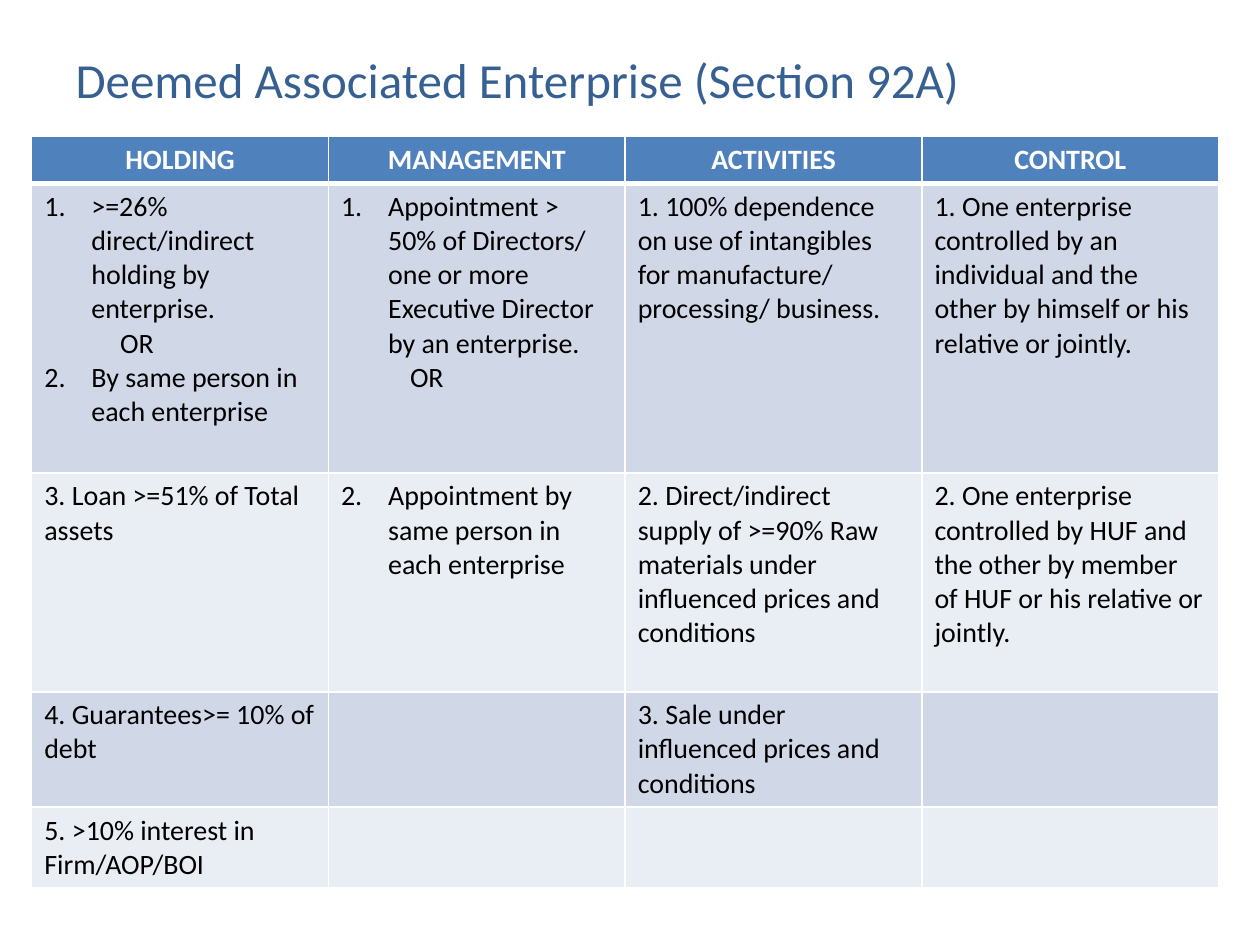
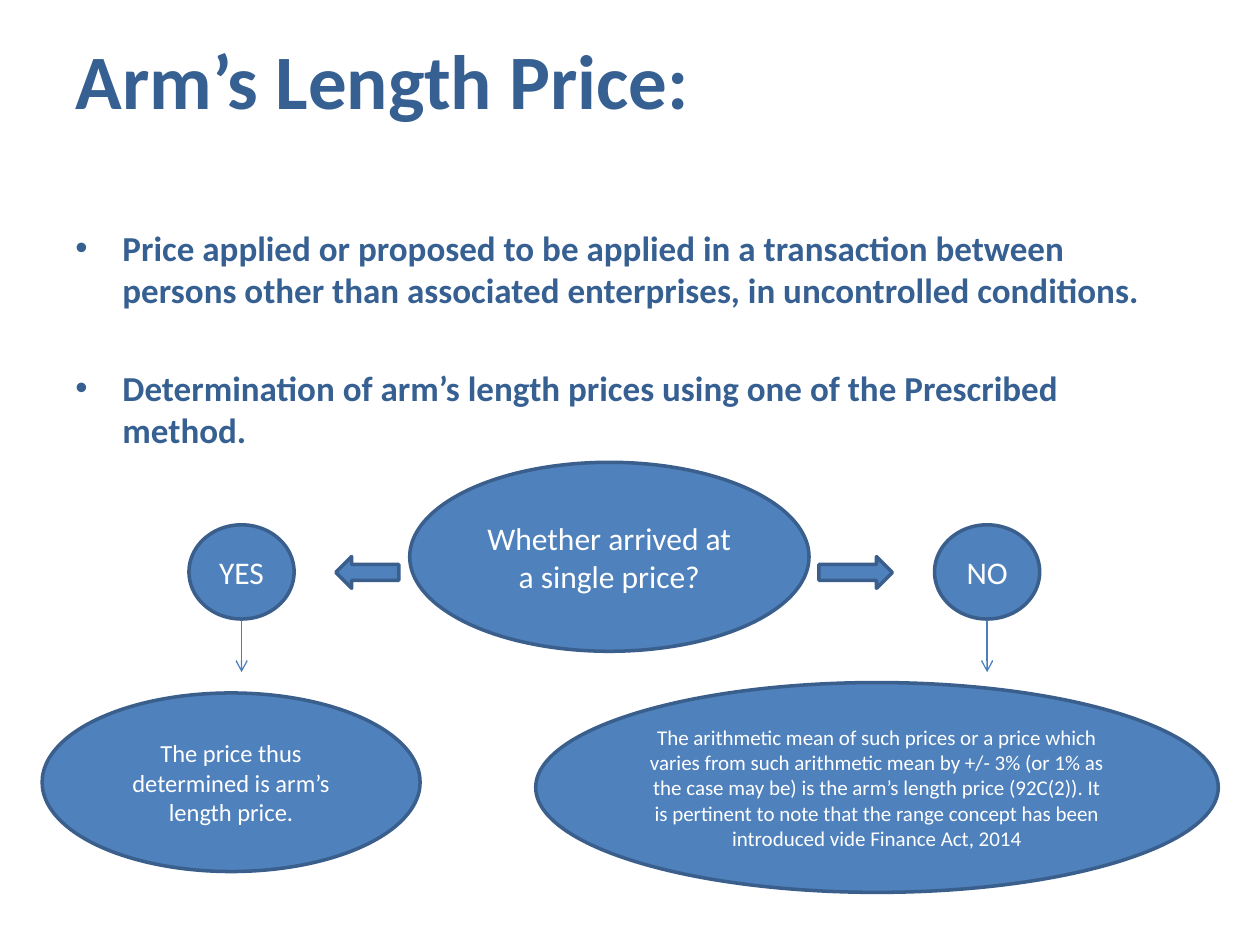
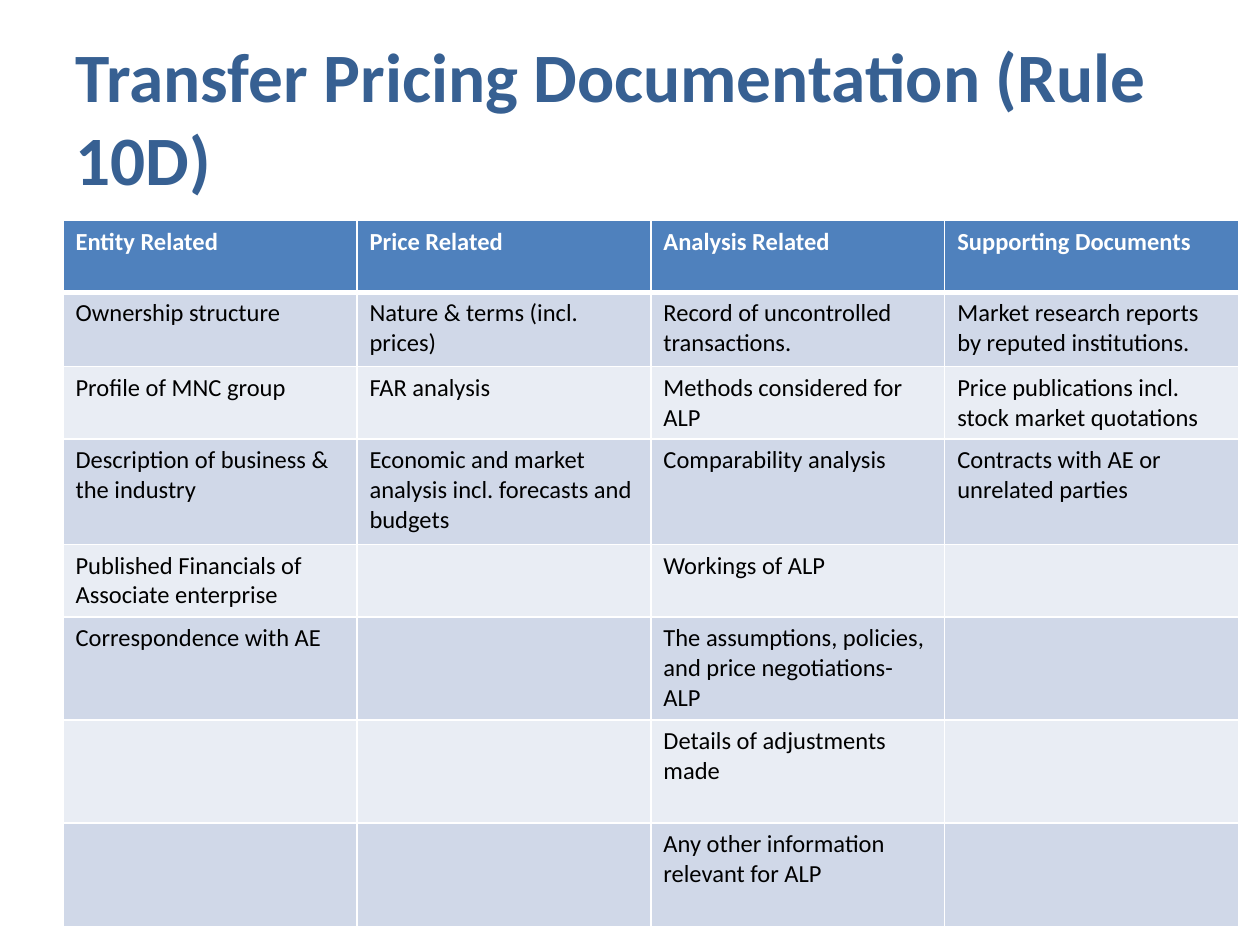
from dataclasses import dataclass

from lxml import etree
from pptx import Presentation
from pptx.dml.color import RGBColor
from pptx.enum.shapes import MSO_CONNECTOR, MSO_SHAPE
from pptx.enum.text import MSO_ANCHOR, MSO_AUTO_SIZE, PP_ALIGN
from pptx.oxml.ns import qn
from pptx.util import Cm, Pt

LEFT, CENTER = PP_ALIGN.LEFT, PP_ALIGN.CENTER
MIDDLE = MSO_ANCHOR.MIDDLE
NO_FIT = MSO_AUTO_SIZE.NONE
STRAIGHT = MSO_CONNECTOR.STRAIGHT
OVAL = MSO_SHAPE.OVAL
RIGHT_ARROW, LEFT_ARROW = MSO_SHAPE.RIGHT_ARROW, MSO_SHAPE.LEFT_ARROW

FONT = "Calibri"
COLORS = {
    "title": "376092",
    "accent": "4F81BD",
    "outline": "3A5F8C",
    "arrow": "4B7EBC",
    "band_dark": "D0D8E8",
    "band_light": "E9EDF4",
    "white": "FFFFFF",
    "black": "000000",
}
TITLE_ONLY = 5
HANGING = 0.95


@dataclass(frozen=True)
class Item:
    """A cell paragraph: numbered with a hanging indent, or moved right by indent."""
    text: str
    number: int = 0
    indent: float = 0


@dataclass(frozen=True)
class Grid:
    left: float
    top: float
    width: float
    heights: tuple[float, ...]
    size: float
    header_align: PP_ALIGN
    rows: tuple[tuple[str | tuple[Item, ...], ...], ...]


@dataclass(frozen=True)
class Node:
    kind: MSO_SHAPE
    left: float
    top: float
    width: float
    height: float
    text: str = ""
    size: float = 18


ENTERPRISE_GRID = Grid(
    0.64, 2.75, 23.93, (0.91, 5.84, 4.41, 2.32, 1.63), 16, CENTER,
    (
        ("HOLDING", "MANAGEMENT", "ACTIVITIES", "CONTROL"),
        (
            (
                Item(">=26% direct/indirect holding by enterprise.", number=1),
                Item("OR", indent=1.53),
                Item("By same person in each enterprise", number=2),
            ),
            (
                Item("Appointment > 50% of Directors/ one or more Executive "
                     "Director by an enterprise.", number=1),
                Item("OR", indent=1.39),
            ),
            "1. 100% dependence on use of intangibles for manufacture/ "
            "processing/ business.",
            "1. One enterprise controlled by an individual and the other by "
            "himself or his relative or jointly.",
        ),
        (
            "3. Loan >=51% of Total assets",
            (Item("Appointment by same person in each enterprise", number=2),),
            "2. Direct/indirect supply of >=90% Raw materials under influenced "
            "prices and conditions",
            "2. One enterprise controlled by HUF and the other by member of HUF "
            "or his relative or jointly.",
        ),
        ("4. Guarantees>= 10% of debt", "",
         "3. Sale under influenced prices and conditions", ""),
        ("5. >10% interest in Firm/AOP/BOI", "", "", ""),
    ),
)

DOCUMENT_GRID = Grid(
    1.27, 4.45, 23.7, (1.44, 1.5, 1.45, 2.13, 1.45, 2.08, 2.08, 2.08), 14, LEFT,
    (
        ("Entity Related", "Price Related", "Analysis Related",
         "Supporting Documents"),
        ("Ownership structure", "Nature & terms (incl. prices)",
         "Record of uncontrolled transactions.",
         "Market research reports by reputed institutions."),
        ("Profile of MNC group", "FAR analysis", "Methods considered for ALP",
         "Price publications incl. stock market quotations"),
        ("Description of business & the industry",
         "Economic and market analysis incl. forecasts and budgets",
         "Comparability analysis", "Contracts with AE or unrelated parties"),
        ("Published Financials of Associate enterprise", "", "Workings of ALP", ""),
        ("Correspondence with AE", "",
         "The assumptions, policies, and price negotiations- ALP", ""),
        ("", "", "Details of adjustments made", ""),
        ("", "", "Any other information relevant for ALP", ""),
    ),
)

PRICE_POINTS = (
    "Price applied or proposed to be applied in a transaction between persons "
    "other than associated enterprises, in uncontrolled conditions.",
    "Determination of arm’s length prices using one of the Prescribed method.",
)

PRICE_NODES = (
    Node(OVAL, 8.26, 9.32, 8.05, 3.81, "Whether arrived at a single price?"),
    Node(RIGHT_ARROW, 16.51, 11.22, 1.48, 0.64),
    Node(LEFT_ARROW, 6.77, 11.22, 1.27, 0.64),
    Node(OVAL, 3.81, 10.58, 2.12, 1.9, "YES"),
    Node(OVAL, 18.84, 10.58, 2.12, 1.9, "NO"),
    Node(OVAL, 0.85, 13.97, 7.62, 3.6,
         "The price thus determined is arm’s length price.", 14),
    Node(OVAL, 10.8, 13.76, 13.76, 4.23,
         "The arithmetic mean of such prices or a price which varies from such "
         "arithmetic mean by +/- 3% (or 1% as the case may be) is the arm’s "
         "length price (92C(2)). It is pertinent to note that the range concept "
         "has been introduced vide Finance Act, 2014", 12),
)
ANSWER_ARROW_XS = (4.87, 19.9)


def rgb(name: str) -> RGBColor:
    return RGBColor.from_string(COLORS[name])


def add_span(para, text: str, size: float, color: str, bold: bool = False) -> None:
    span = para.add_run()
    span.text = text
    span.font.name = FONT
    span.font.size = Pt(size)
    span.font.bold = bold
    span.font.color.rgb = rgb(color)


def set_indent(para, margin: float, first_line: float = 0):
    properties = para._p.get_or_add_pPr()
    properties.set("marL", str(Cm(margin)))
    properties.set("indent", str(Cm(first_line)))
    return properties


def add_title_page(deck, title: str, size: float, bold: bool = True, top: float = 0):
    page = deck.slides.add_slide(deck.slide_layouts[TITLE_ONLY])
    box = page.shapes.title
    box.left, box.top, box.width, box.height = Cm(1.27), Cm(top), Cm(22.86), Cm(3.18)
    box.text_frame.auto_size = NO_FIT
    box.text_frame.vertical_anchor = MIDDLE
    para = box.text_frame.paragraphs[0]
    para.alignment = LEFT
    add_span(para, title, size, "title", bold)
    return page


def set_borders(cell, top: float, bottom: float) -> None:
    """Draw white cell borders; the sides are 1 pt wide."""
    properties = cell._tc.get_or_add_tcPr()
    for tag, width in (("a:lnL", 1), ("a:lnR", 1), ("a:lnT", top), ("a:lnB", bottom)):
        border = etree.SubElement(properties, qn(tag), w=str(Pt(width)))
        fill = etree.SubElement(border, qn("a:solidFill"))
        etree.SubElement(fill, qn("a:srgbClr"), val=COLORS["white"])


def fill_cell(cell, content: str | tuple[Item, ...], size: float, color: str,
              bold: bool, align: PP_ALIGN) -> None:
    items = (Item(content),) if isinstance(content, str) else content
    frame = cell.text_frame
    for index, item in enumerate(items):
        para = frame.add_paragraph() if index else frame.paragraphs[0]
        para.alignment = align
        if item.number:
            properties = set_indent(para, HANGING, -HANGING)
            etree.SubElement(properties, qn("a:buFont"), typeface=FONT)
            etree.SubElement(properties, qn("a:buAutoNum"), type="arabicPeriod",
                             startAt=str(item.number))
        elif item.indent:
            set_indent(para, item.indent)
        if item.text:
            add_span(para, item.text, size, color, bold)


def add_grid(page, grid: Grid) -> None:
    column_count = len(grid.rows[0])
    table = page.shapes.add_table(
        len(grid.rows), column_count, Cm(grid.left), Cm(grid.top),
        Cm(grid.width), Cm(sum(grid.heights))).table
    for column in table.columns:
        column.width = Cm(grid.width / column_count)
    for row_index, (height, contents) in enumerate(zip(grid.heights, grid.rows)):
        table.rows[row_index].height = Cm(height)
        header = row_index == 0
        band = "band_dark" if row_index % 2 else "band_light"
        for column_index, content in enumerate(contents):
            cell = table.cell(row_index, column_index)
            set_borders(cell, 3 if row_index == 1 else 1, 3 if header else 1)
            cell.fill.solid()
            cell.fill.fore_color.rgb = rgb("accent" if header else band)
            fill_cell(cell, content, grid.size, "white" if header else "black",
                      header, grid.header_align if header else LEFT)


def add_points(page, points: tuple[str, ...]) -> None:
    box = page.shapes.add_textbox(Cm(1.27), Cm(4.45), Cm(22.86), Cm(12.57))
    frame = box.text_frame
    frame.word_wrap = True
    for index, point in enumerate(points):
        para = frame.add_paragraph() if index else frame.paragraphs[0]
        para.space_before = Pt(32 if index else 0)
        properties = set_indent(para, HANGING, -HANGING)
        etree.SubElement(properties, qn("a:buFont"), typeface="Arial")
        etree.SubElement(properties, qn("a:buChar"), char="•")
        add_span(para, point, 20, "title", True)


def add_node(page, node: Node) -> None:
    shape = page.shapes.add_shape(node.kind, Cm(node.left), Cm(node.top),
                                  Cm(node.width), Cm(node.height))
    shape.shadow.inherit = False
    shape.fill.solid()
    shape.fill.fore_color.rgb = rgb("accent")
    shape.line.color.rgb = rgb("outline")
    shape.line.width = Pt(2)
    if node.text:
        frame = shape.text_frame
        frame.word_wrap = True
        frame.vertical_anchor = MIDDLE
        frame.paragraphs[0].alignment = CENTER
        add_span(frame.paragraphs[0], node.text, node.size, "white")


def add_down_arrow(page, x: float, top: float, bottom: float) -> None:
    arrow = page.shapes.add_connector(STRAIGHT, Cm(x), Cm(top), Cm(x), Cm(bottom))
    arrow.line.color.rgb = rgb("arrow")
    arrow.line.width = Pt(0.75)
    etree.SubElement(arrow.line._get_or_add_ln(), qn("a:tailEnd"), type="arrow")
    etree.SubElement(arrow._element.spPr, qn("a:effectLst"))


def main() -> None:
    deck = Presentation()
    deck.slide_width, deck.slide_height = Cm(25.4), Cm(19.05)

    page = add_title_page(deck, "Deemed Associated Enterprise (Section 92A)", 28,
                          bold=False)
    add_grid(page, ENTERPRISE_GRID)

    page = add_title_page(deck, "Arm’s Length Price:", 44)
    add_points(page, PRICE_POINTS)
    for node in PRICE_NODES:
        add_node(page, node)
    for x in ANSWER_ARROW_XS:
        add_down_arrow(page, x, 12.49, 13.55)

    page = add_title_page(deck, "Transfer Pricing Documentation (Rule 10D)", 39.6,
                          top=0.76)
    add_grid(page, DOCUMENT_GRID)

    deck.save("out.pptx")


if __name__ == "__main__":
    main()
